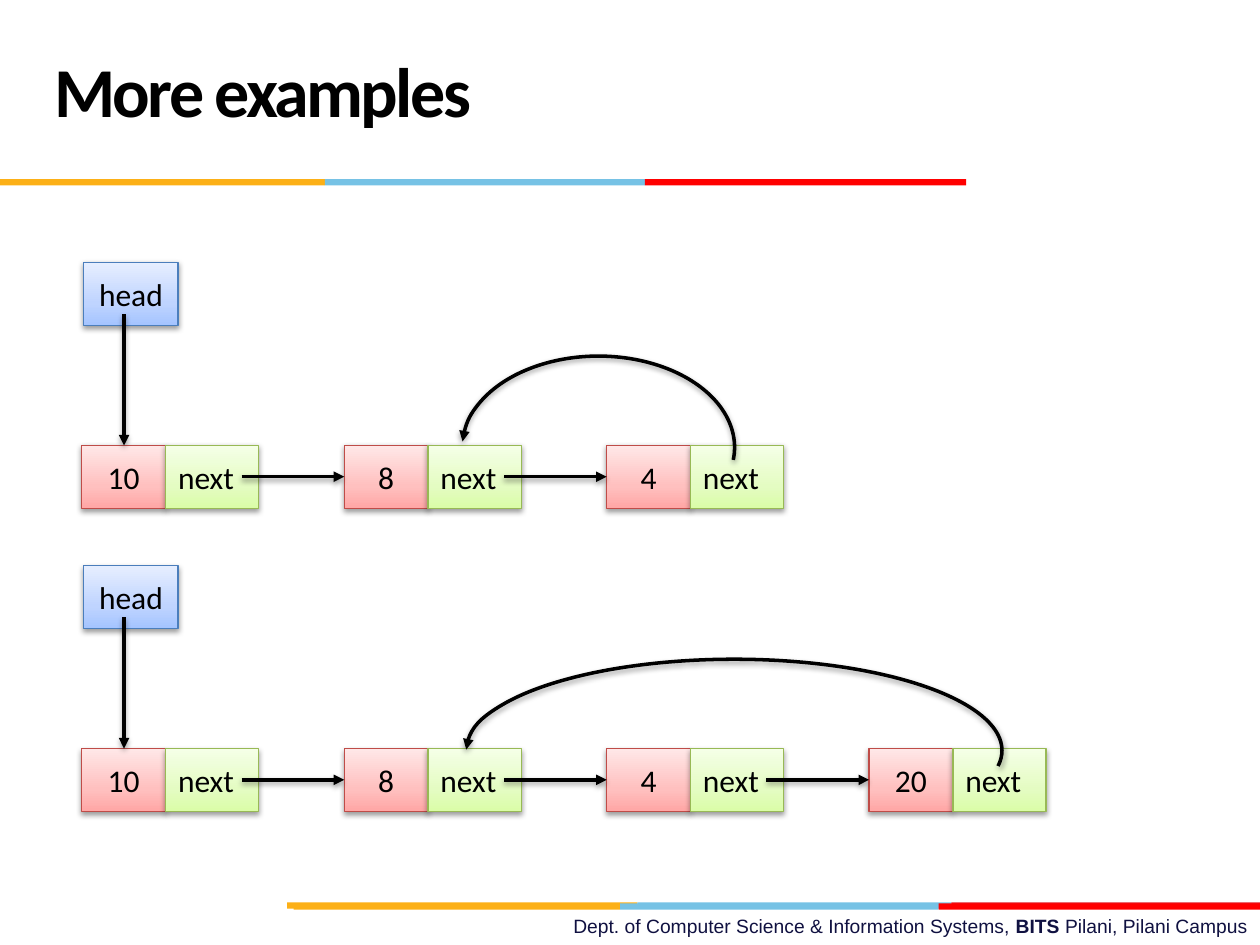
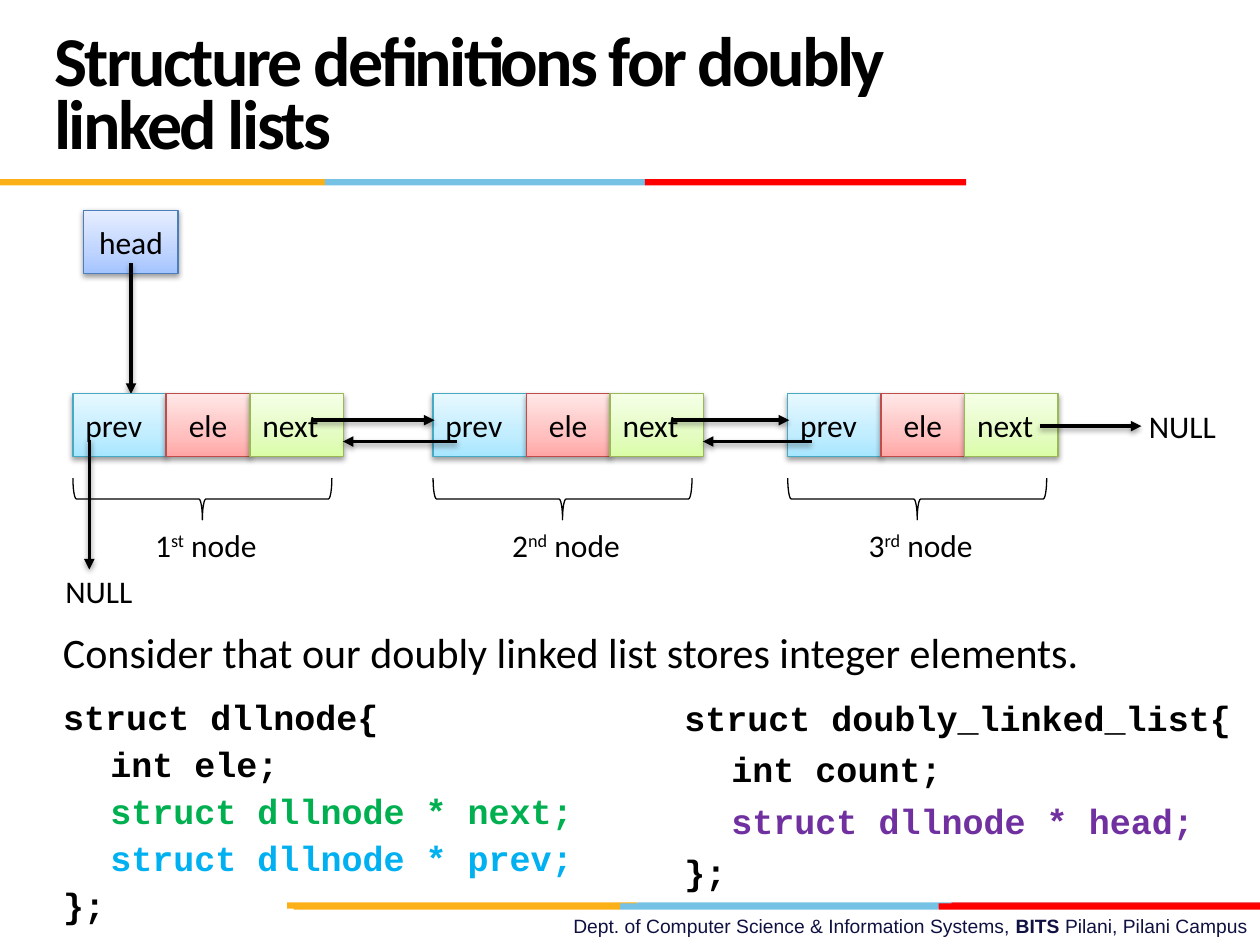
"""Build two slides on linked lists with node diagrams and structure definitions."""
from dataclasses import dataclass
from itertools import pairwise
from typing import NamedTuple

from lxml.etree import SubElement
from pptx import Presentation
from pptx.dml.color import RGBColor
from pptx.enum.shapes import MSO_CONNECTOR, MSO_SHAPE
from pptx.enum.text import MSO_ANCHOR, MSO_AUTO_SIZE, PP_ALIGN
from pptx.oxml.ns import qn
from pptx.util import Cm, Pt


class Tint(NamedTuple):
    bottom: str
    middle: str
    top: str
    line: str


class Strip(NamedTuple):
    top: float
    edges: tuple
    colours: tuple


@dataclass(frozen=True)
class Theme:
    ink: str = "000000"
    footer_ink: str = "101141"
    next_code: str = "00B050"
    prev_code: str = "00B0F0"
    head_code: str = "7030A0"
    amber: str = "FCB017"
    sky: str = "76C2E5"
    red: str = "FF0000"
    crimson: str = "E31C24"
    head: Tint = Tint("A4C4FF", "BFD4FF", "E6EEFF", "4B7EBC")
    value: Tint = Tint("FFA6A5", "FFC0BF", "FFE7E7", "BF4C48")
    next: Tint = Tint("DAFDA7", "E4FCC2", "F5FFE7", "98B955")
    prev: Tint = Tint("A7E6FF", "C1EDFF", "E7F8FF", "46AAC5")
    sans: str = "Calibri"
    footer_font: str = "Arial"
    mono: str = "Courier New"
    title_size: int = 40
    sentence_size: int = 24
    code_size: int = 20
    label_size: int = 18
    footer_size: int = 11


THEME = Theme()
STRIPS = (
    Strip(18.19, (5.79, 12.85, 19.18, 25.4), (THEME.amber, THEME.sky, THEME.crimson)),
    Strip(18.21, (5.92, 12.5, 18.92, 25.4), (THEME.amber, THEME.sky, THEME.red)),
    Strip(3.61, (0, 6.55, 13, 19.48), (THEME.amber, THEME.sky, THEME.red)),
)
CELL_HEIGHT = 1.27
VALUE_WIDTH = 1.69
POINTER_WIDTH = 1.88
HEAD_LEFT = 1.69
HEAD_WIDTH = 1.9
CODE_INDENT = 0.95


class Sketch:
    """Draw elements in one style on the current slide."""

    def __init__(self, deck, theme):
        self.deck = deck
        self.theme = theme
        self.page = None

    def start(self, layout_index, title):
        self.page = self.deck.slides.add_slide(self.deck.slide_layouts[layout_index])
        for strip in STRIPS:
            for (left, right), colour in zip(pairwise(strip.edges), strip.colours):
                self.band(left, strip.top, right - left, colour)
        self.footer()
        self.title(title)

    def place(self, shape, left, top, width, height):
        shape.left, shape.top = Cm(left), Cm(top)
        shape.width, shape.height = Cm(width), Cm(height)

    def shape(self, kind, left, top, width, height):
        shape = self.page.shapes.add_shape(kind, Cm(left), Cm(top), Cm(width), Cm(height))
        shape.shadow.inherit = False
        return shape

    def band(self, left, top, width, colour):
        band = self.shape(MSO_SHAPE.RECTANGLE, left, top, width, 0.13)
        band.fill.solid()
        band.fill.fore_color.rgb = RGBColor.from_string(colour)
        band.line.fill.background()

    def stroke(self, line, colour, width):
        line.color.rgb = RGBColor.from_string(colour)
        line.width = Pt(width)

    def cast_shadow(self, shape):
        properties = shape._element.spPr
        effects = properties.find(qn("a:effectLst"))
        if effects is None:
            effects = SubElement(properties, qn("a:effectLst"))
        shadow = SubElement(effects, qn("a:outerShdw"), blurRad="40000", dist="20000",
                            dir="5400000", rotWithShape="0")
        colour = SubElement(shadow, qn("a:srgbClr"), val=self.theme.ink)
        SubElement(colour, qn("a:alpha"), val="38000")

    def arrowhead(self, line, end):
        SubElement(line._get_or_add_ln(), qn(end), type="triangle")

    def format_span(self, span, font, size, colour=None, bold=False):
        span.font.name = font
        span.font.size = Pt(size)
        span.font.bold = bold
        span.font.color.rgb = RGBColor.from_string(colour or self.theme.ink)

    def title(self, text):
        title = self.page.shapes.title
        self.place(title, 0.84, 0.43, 17.58, 3.18)
        frame = title.text_frame
        frame.text = text
        frame.auto_size = MSO_AUTO_SIZE.NONE
        frame.vertical_anchor = MSO_ANCHOR.MIDDLE
        para = frame.paragraphs[0]
        para.alignment = PP_ALIGN.LEFT
        para.line_spacing = Pt(36)
        span = para.runs[0]
        self.format_span(span, self.theme.sans, self.theme.title_size, bold=True)
        span._r.get_or_add_rPr().set("spc", "-150")

    def text(self, left, top, width, height, align=PP_ALIGN.LEFT):
        box = self.page.shapes.add_textbox(Cm(left), Cm(top), Cm(width), Cm(height))
        box.text_frame.word_wrap = True
        para = box.text_frame.paragraphs[0]
        para.alignment = align
        return para

    def footer(self):
        para = self.text(0, 18.31, 25.4, 0.74, PP_ALIGN.RIGHT)
        for text in ("Dept. of Computer Science & Information Systems, ", "BITS ",
                     "Pilani, Pilani Campus"):
            span = para.add_run()
            span.text = text
            self.format_span(span, self.theme.footer_font, self.theme.footer_size,
                             self.theme.footer_ink, text == "BITS ")

    def label(self, text, left, top):
        para = self.text(left, top, 1.96, 1.02)
        para.text = text
        self.format_span(para.runs[0], self.theme.sans, self.theme.label_size)

    def ordinal(self, number, suffix, left, top):
        para = self.text(left, top, 5.36, 1.02, PP_ALIGN.CENTER)
        for text in (number, suffix, " node"):
            span = para.add_run()
            span.text = text
            self.format_span(span, self.theme.sans, self.theme.label_size)
        para.runs[1]._r.get_or_add_rPr().set("baseline", "30000")

    def sentence(self, text, left, top, width, height):
        para = self.text(left, top, width, height)
        para.text = text
        self.format_span(para.runs[0], self.theme.sans, self.theme.sentence_size)

    def code(self, placeholder_index, place, lines, spacing):
        box = self.page.placeholders[placeholder_index]
        self.place(box, *place)
        frame = box.text_frame
        frame.auto_size = MSO_AUTO_SIZE.NONE
        frame.margin_top = Cm(0.27)
        for index, (text, colour, depth) in enumerate(lines):
            para = frame.add_paragraph() if index else frame.paragraphs[0]
            para.text = text
            properties = para._p.get_or_add_pPr()
            properties.set("marL", str(Cm(CODE_INDENT * depth)))
            properties.set("indent", "0")
            SubElement(properties, qn("a:buNone"))
            para.space_before = Pt(5.3 if index else 0)
            para.line_spacing = spacing
            self.format_span(para.runs[0], self.theme.mono, self.theme.code_size,
                             colour, True)

    def cell(self, text, left, top, width, tint, align=PP_ALIGN.LEFT):
        cell = self.shape(MSO_SHAPE.RECTANGLE, left, top, width, CELL_HEIGHT)
        cell.fill.gradient()
        cell.fill.gradient_angle = 90
        stops = cell._element.spPr.find(".//" + qn("a:gsLst"))
        for stop in list(stops):
            stops.remove(stop)
        for position, colour in zip(("0", "35000", "100000"), tint):
            stop = SubElement(stops, qn("a:gs"), pos=position)
            SubElement(stop, qn("a:srgbClr"), val=colour)
        self.stroke(cell.line, tint.line, 0.75)
        self.cast_shadow(cell)
        frame = cell.text_frame
        frame.text = text
        frame.vertical_anchor = MSO_ANCHOR.MIDDLE
        frame.paragraphs[0].alignment = align
        self.format_span(frame.paragraphs[0].runs[0], self.theme.sans,
                         self.theme.label_size)

    def head(self, top):
        self.cell("head", HEAD_LEFT, top, HEAD_WIDTH, self.theme.head, PP_ALIGN.CENTER)

    def node(self, value, left, top, doubly=False):
        if doubly:
            self.cell("prev", left, top, POINTER_WIDTH, self.theme.prev)
            left += POINTER_WIDTH
        self.cell(value, left, top, VALUE_WIDTH, self.theme.value, PP_ALIGN.CENTER)
        self.cell("next", left + VALUE_WIDTH, top, POINTER_WIDTH, self.theme.next)

    def arrow(self, start_x, start_y, end_x, end_y):
        arrow = self.page.shapes.add_connector(
            MSO_CONNECTOR.STRAIGHT, Cm(start_x), Cm(start_y), Cm(end_x), Cm(end_y))
        self.stroke(arrow.line, self.theme.ink, 2)
        self.arrowhead(arrow.line, "a:tailEnd")
        self.cast_shadow(arrow)

    def loop(self, left, top, width, start, end):
        loop = self.shape(MSO_SHAPE.ARC, left, top, width, 3.68)
        loop.adjustments[0], loop.adjustments[1] = start, end
        loop.fill.background()
        self.stroke(loop.line, self.theme.ink, 2)
        self.arrowhead(loop.line, "a:headEnd")
        self.cast_shadow(loop)

    def brace(self, left, top, span, depth):
        shift = (span - depth) / 2
        brace = self.shape(MSO_SHAPE.RIGHT_BRACE, left + shift, top - shift, depth, span)
        brace.rotation = 90
        brace.fill.background()
        self.stroke(brace.line, self.theme.ink, 0.75)


def draw_examples(sketch):
    sketch.start(5, "More examples")
    chains = (
        (5.29, ("10", "8", "4"), (9.32, 5.49, 109.51, 3.19)),
        (11.4, ("10", "8", "4", "20"), (9.4, 10.8, 108.12, 2.02)),
    )
    for head_top, values, (loop_left, loop_width, start, end) in chains:
        node_top = head_top + 3.69
        lefts = [1.65 + 5.29 * index for index in range(len(values))]
        sketch.head(head_top)
        for value, left in zip(values, lefts):
            sketch.node(value, left, node_top)
        sketch.arrow(2.5, head_top + 1.04, 2.5, node_top)
        for left, following in pairwise(lefts):
            sketch.arrow(left + 3.22, node_top + 0.63, following, node_top + 0.63)
        sketch.loop(loop_left, node_top - 1.8, loop_width, start, end)


def draw_definitions(sketch):
    theme = sketch.theme
    sketch.start(3, "Structure definitions for doubly linked lists")
    node_top = 7.94
    lefts = (1.47, 8.73, 15.88)
    sketch.head(4.24)
    sketch.arrow(2.64, 5.31, 2.64, node_top)
    for left, number, suffix in zip(lefts, "123", ("st", "nd", "rd")):
        sketch.node("ele", left, node_top, doubly=True)
        sketch.brace(left, 9.64, 5.22, 0.84)
        sketch.ordinal(number, suffix, left, 10.47)
    for left, following in pairwise(lefts):
        sketch.arrow(left + 4.84, 8.47, following + 0.03, 8.47)
        sketch.arrow(following + 0.48, 8.9, left + 5.44, 8.9)
    sketch.arrow(20.96, 8.59, 23.01, 8.59)
    sketch.label("NULL", 22.91, 8.08)
    sketch.arrow(1.8, 8.86, 1.8, 11.48)
    sketch.label("NULL", 1.07, 11.4)
    sketch.sentence("Consider that our doubly linked list stores integer elements.",
                    1.02, 12.5, 22.86, 1.35)
    sketch.code(1, (1.02, 13.84, 11.38, 5.03), (
        ("struct dllnode{", theme.ink, 0),
        ("int ele;", theme.ink, 1),
        ("struct dllnode * next;", theme.next_code, 1),
        ("struct dllnode * prev;", theme.prev_code, 1),
        ("};", theme.ink, 0)), 0.9)
    sketch.code(2, (13.54, 13.77, 11.63, 5.03), (
        ("struct doubly_linked_list{", theme.ink, 0),
        ("int count;", theme.ink, 1),
        ("struct dllnode * head;", theme.head_code, 1),
        ("};", theme.ink, 0)), 1.0)


def main():
    deck = Presentation()
    deck.slide_width, deck.slide_height = Cm(25.4), Cm(19.05)
    sketch = Sketch(deck, THEME)
    draw_examples(sketch)
    draw_definitions(sketch)
    deck.save("out.pptx")


if __name__ == "__main__":
    main()
